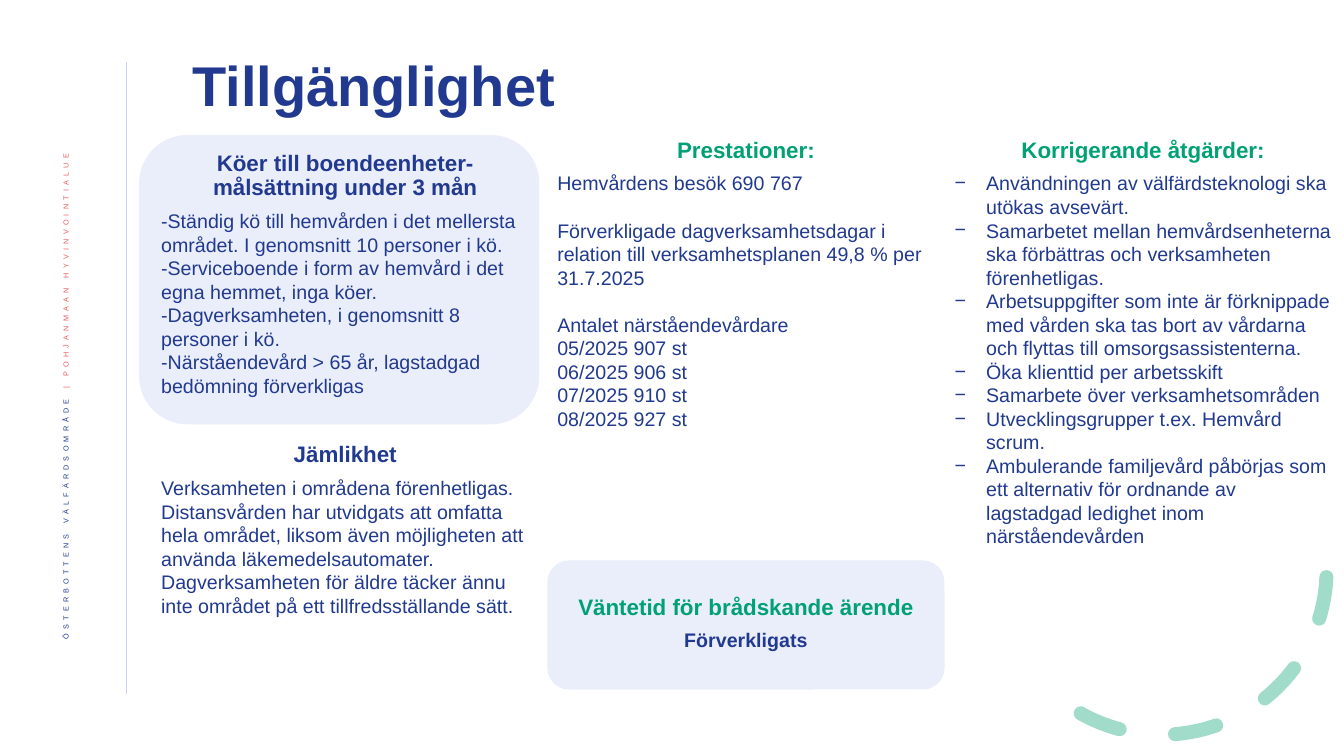
from lxml import etree
from pptx import Presentation
from pptx.dml.color import RGBColor
from pptx.enum.dml import MSO_LINE
from pptx.enum.shapes import MSO_CONNECTOR, MSO_SHAPE
from pptx.enum.text import MSO_ANCHOR, MSO_AUTO_SIZE, PP_ALIGN
from pptx.oxml.ns import qn
from pptx.util import Pt

CENTER, LEFT, RIGHT = PP_ALIGN.CENTER, PP_ALIGN.LEFT, PP_ALIGN.RIGHT
TOP, MIDDLE = MSO_ANCHOR.TOP, MSO_ANCHOR.MIDDLE
BLUE, GREEN, RED, LILAC = "213A8F", "00A174", "EB5C5F", "C9D2F2"

TITLE = "Tillgänglighet"
SIDE_TEXT = [("ÖSTERBOTTENS VÄLFÄRDSOMRÅDE ", BLUE),
             ("| POHJANMAAN HYVINVOINTIALUE ", RED)]

QUEUES = ("Köer till boendeenheter- målsättning under 3 mån", [
    "-Ständig kö till hemvården i det mellersta området. I genomsnitt 10 personer i kö.",
    "-Serviceboende i form av hemvård i det egna hemmet, inga köer.",
    "-Dagverksamheten, i genomsnitt 8 personer i kö.",
    "-Närståendevård > 65 år, lagstadgad bedömning förverkligas",
])
EQUALITY = ("Jämlikhet", [
    "Verksamheten i områdena förenhetligas. Distansvården har utvidgats att omfatta "
    "hela området, liksom även möjligheten att använda läkemedelsautomater.",
    "Dagverksamheten för äldre täcker ännu inte området på ett tillfredsställande sätt.",
])
RESULTS = ("Prestationer:", [
    "Hemvårdens besök 690 767",
    "Förverkligade dagverksamhetsdagar i relation till verksamhetsplanen 49,8 % per 31.7.2025",
    "Antalet närståendevårdare",
    "05/2025 907 st",
    "06/2025 906 st",
    "07/2025 910 st",
    "08/2025 927 st",
])
ACTIONS = ("Korrigerande åtgärder:", [
    "Användningen av välfärdsteknologi ska utökas avsevärt.",
    "Samarbetet mellan hemvårdsenheterna ska förbättras och verksamheten förenhetligas.",
    "Arbetsuppgifter som inte är förknippade med vården ska tas bort av vårdarna "
    "och flyttas till omsorgsassistenterna.",
    "Öka klienttid per arbetsskift",
    "Samarbete över verksamhetsområden",
    "Utvecklingsgrupper t.ex. Hemvård scrum.",
    "Ambulerande familjevård påbörjas som ett alternativ för ordnande av "
    "lagstadgad ledighet inom närståendevården",
])
WAITING = ("Väntetid för brådskande ärende", ["Förverkligats"])

COL_LEFT = (108, 277.2)
COL_MID = (391, 283.7)
COL_RIGHT = (674.7, 283.7)
GROUP_GAP = 16.9
INDENT = 22.5


def rgb(value):
    return RGBColor.from_string(value)


def set_format(target, **values):
    for name, value in values.items():
        setattr(target, name, value)


def set_font(font, size, color, bold=False):
    set_format(font, name="Arial", size=Pt(size), bold=bold)
    font.color.rgb = rgb(color)


def place(shape, x, y, w, h):
    set_format(shape, left=Pt(x), top=Pt(y), width=Pt(w), height=Pt(h))


def set_alpha(fill_parent, percent):
    """Make the solid colour below this element partly transparent."""
    color = fill_parent.find(".//" + qn("a:srgbClr"))
    etree.SubElement(color, qn("a:alpha")).set("val", str(percent * 1000))


def set_bullet(p, char=None):
    pPr = p._p.get_or_add_pPr()
    indent = Pt(INDENT) if char else 0
    pPr.set("marL", str(indent))
    pPr.set("indent", str(-indent))
    if char:
        etree.SubElement(pPr, qn("a:buChar")).set("char", char)
    else:
        etree.SubElement(pPr, qn("a:buNone"))


def add_box(s, x, y, w, h):
    sp = s.shapes.add_textbox(0, 0, 0, 0)
    place(sp, x, y, w, h)
    return sp


def write_section(sp, section, color, heading_spacing=1.0, bullet=None,
                  gaps=(), align=LEFT, bold=False):
    """Write a heading and its lines; gaps holds the lines that open a new group."""
    heading, lines = section
    tf = sp.text_frame
    set_format(tf, word_wrap=True, auto_size=MSO_AUTO_SIZE.NONE, vertical_anchor=TOP)
    for i, text in enumerate([heading] + lines):
        p = tf.paragraphs[0] if i == 0 else tf.add_paragraph()
        set_bullet(p, bullet if i else None)
        set_format(p, alignment=align if i else CENTER,
                   line_spacing=1.0 if i else heading_spacing,
                   space_before=Pt(GROUP_GAP if i in gaps else 0),
                   space_after=Pt(0 if i else 6))
        r = p.add_run()
        r.text = text
        if i:
            set_font(r.font, 14, BLUE, bold)
        else:
            set_font(r.font, 16, color, True)


def add_panel(s, x, y, w, h):
    sp = s.shapes.add_shape(MSO_SHAPE.ROUNDED_RECTANGLE, Pt(x), Pt(y), Pt(w), Pt(h))
    sp.shadow.inherit = False
    sp.fill.solid()
    sp.fill.fore_color.rgb = rgb(LILAC)
    set_alpha(sp._element.spPr, 38)
    sp.line.fill.background()


def add_side_text(s):
    tf = add_box(s, 30.2, 98.6, 37.4, 412.6).text_frame
    set_format(tf, word_wrap=True, vertical_anchor=MIDDLE)
    tf._txBody.bodyPr.set("vert", "vert270")
    p = tf.paragraphs[0]
    set_format(p, alignment=RIGHT, line_spacing=0.9)
    for text, color in SIDE_TEXT:
        r = p.add_run()
        r.text = text
        set_font(r.font, 9, color)
        rPr = r._r.get_or_add_rPr()
        rPr.set("baseline", "30000")
        rPr.set("spc", "300")


def add_side_line(s):
    line = s.shapes.add_connector(MSO_CONNECTOR.STRAIGHT, Pt(90), Pt(44), Pt(90), Pt(495.4))
    line.line.width = Pt(0.5)
    line.line.color.rgb = rgb(LILAC)
    etree.SubElement(line._element.spPr, qn("a:effectLst"))


def add_dashed_arc(s):
    arc = s.shapes.add_shape(MSO_SHAPE.ARC, Pt(712.1), Pt(289.4), Pt(235.4), Pt(235.4))
    arc.shadow.inherit = False
    arc.rotation = 98.9
    for i, degrees in enumerate((263.62, 29.69)):
        arc.adjustments[i] = degrees * 0.6
    arc.fill.background()
    set_format(arc.line, width=Pt(10), dash_style=MSO_LINE.DASH)
    arc.line.color.rgb = rgb(GREEN)
    ln = arc._element.spPr.find(qn("a:ln"))
    ln.set("cap", "rnd")
    set_alpha(ln, 36)


def main():
    prs = Presentation()
    set_format(prs, slide_width=Pt(960), slide_height=Pt(540))
    s = prs.slides.add_slide(prs.slide_layouts[1])

    add_side_line(s)
    add_side_text(s)
    add_dashed_arc(s)

    title = s.shapes.title
    place(title, 130.3, 32.4, 734.4, 61.2)
    title.text_frame.text = TITLE
    set_format(title.text_frame, vertical_anchor=MIDDLE, auto_size=MSO_AUTO_SIZE.NONE)
    p = title.text_frame.paragraphs[0]
    set_format(p, alignment=LEFT, line_spacing=0.9)
    set_font(p.runs[0].font, 40, BLUE, True)

    add_panel(s, 99.4, 96.5, 285.8, 206.6)
    add_panel(s, COL_MID[0], 400.3, COL_MID[1], 92.2)

    left_x, left_w = COL_LEFT
    mid_x, mid_w = COL_MID
    right_x, right_w = COL_RIGHT
    write_section(add_box(s, left_x, 105.1, left_w, 183.6), QUEUES, BLUE, 0.9)
    write_section(add_box(s, left_x, 313.2, left_w, 132.5), EQUALITY, BLUE, 0.9)
    write_section(add_box(s, mid_x, 93.6, mid_w, 253.4), RESULTS, GREEN, gaps=(2, 3))
    write_section(add_box(s, mid_x, 419.8, mid_w, 49.7), WAITING, GREEN,
                  align=CENTER, bold=True)
    actions = s.placeholders[1]
    place(actions, right_x, 93.6, right_w, 326.2)
    write_section(actions, ACTIONS, GREEN, bullet="−")

    prs.save("out.pptx")


if __name__ == "__main__":
    main()
